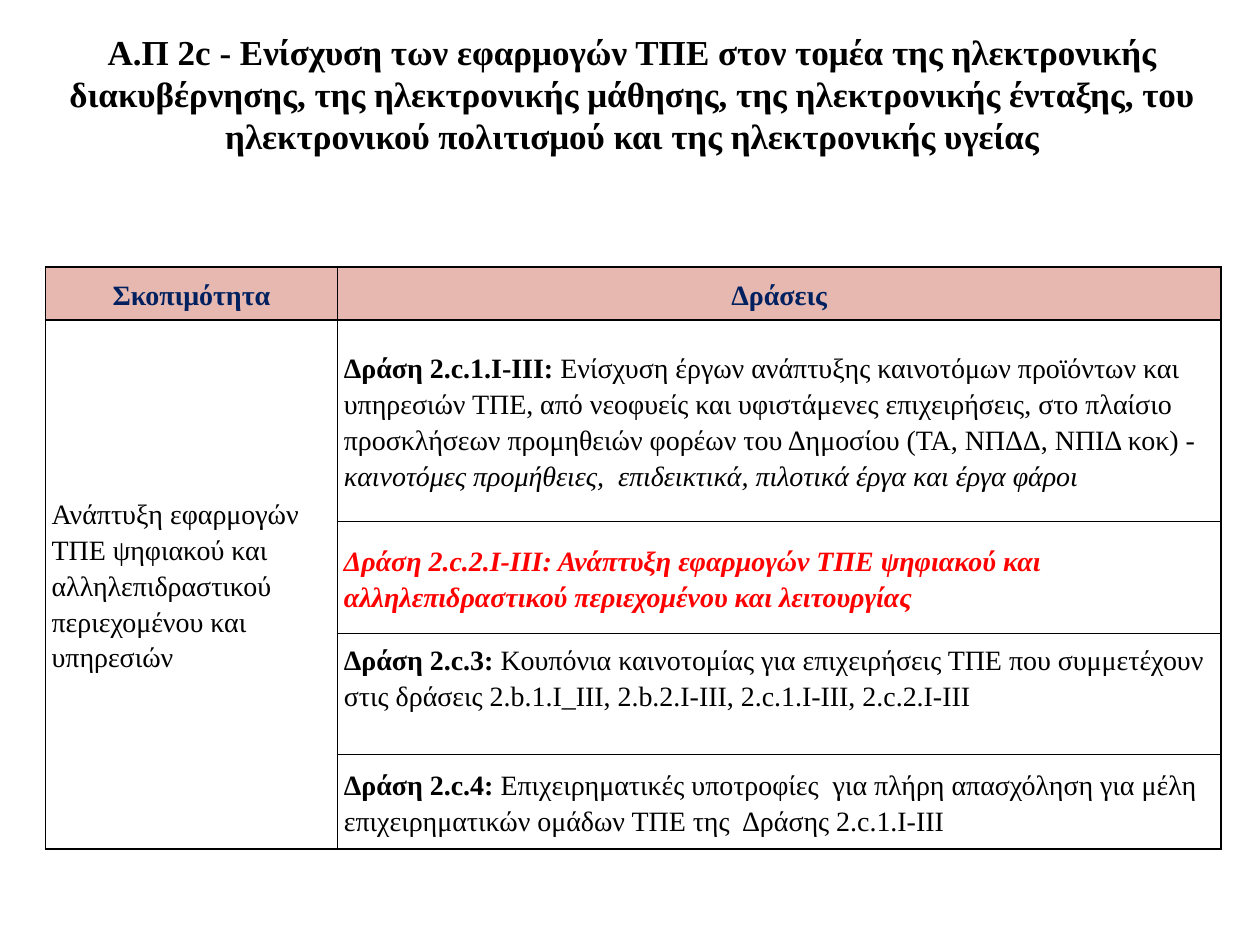
from lxml.etree import SubElement
from pptx import Presentation
from pptx.dml.color import RGBColor
from pptx.enum.text import MSO_ANCHOR, PP_ALIGN
from pptx.oxml.ns import qn
from pptx.util import Inches, Pt

FONT = "Times New Roman"
BLACK, NAVY, RED, PINK, WHITE = "000000", "002060", "FF0000", "E6B8AF", "FFFFFF"
COLUMNS = [2.32, 7.01]
ROWS = [0.42, 1.6, 0.89, 0.96, 0.75]
INSET = 0.05
TITLE = (
    "Α.Π 2c - Ενίσχυση των εφαρμογών ΤΠΕ στον τομέα της ηλεκτρονικής διακυβέρνησης, "
    "της ηλεκτρονικής μάθησης, της ηλεκτρονικής ένταξης, του ηλεκτρονικού πολιτισμού "
    "και της ηλεκτρονικής υγείας"
)
HEADERS = ["Σκοπιμότητα", "Δράσεις"]
PURPOSE = "Ανάπτυξη εφαρμογών ΤΠΕ ψηφιακού και αλληλεπιδραστικού περιεχομένου και υπηρεσιών"
ACTIONS = [
    [
        ("Δράση 2.c.1.Ι-ΙΙΙ: ", "b"),
        ("Ενίσχυση έργων ανάπτυξης καινοτόμων προϊόντων και υπηρεσιών ΤΠΕ, από νεοφυείς "
         "και υφιστάμενες επιχειρήσεις, στο πλαίσιο προσκλήσεων προμηθειών φορέων του "
         "Δημοσίου (ΤΑ, ΝΠΔΔ, ΝΠΙΔ κοκ) - ", ""),
        ("καινοτόμες προμήθειες,  επιδεικτικά, πιλοτικά έργα και έργα φάροι", "i"),
    ],
    [
        ("Δράση 2.c.2.I-ΙΙΙ: Ανάπτυξη εφαρμογών ΤΠΕ ψηφιακού και αλληλεπιδραστικού "
         "περιεχομένου και λειτουργίας", "bi"),
    ],
    [
        ("Δράση 2.c.3: ", "b"),
        ("Κουπόνια καινοτομίας για επιχειρήσεις ΤΠΕ που συμμετέχουν στις δράσεις "
         "2.b.1.Ι_ΙΙΙ, 2.b.2.Ι-ΙΙΙ, 2.c.1.I-III, 2.c.2.I-III", ""),
    ],
    [
        ("Δράση 2.c.4: ", "b"),
        ("Επιχειρηματικές υποτροφίες  για πλήρη απασχόληση για μέλη επιχειρηματικών "
         "ομάδων ΤΠΕ της  Δράσης 2.c.1.I-III", ""),
    ],
]
ACTION_COLORS = [BLACK, RED, BLACK, BLACK]


def color(value):
    """Return the colour for a hex string."""
    return RGBColor.from_string(value)


def write(paragraph, runs, size, ink, alignment=PP_ALIGN.LEFT):
    """Fill a paragraph with (text, style) runs, where b is bold and i is italic."""
    paragraph.alignment = alignment
    paragraph.font.name = FONT
    paragraph.font.size = Pt(size)
    paragraph.font.color.rgb = color(ink)
    for text, style in runs:
        run = paragraph.add_run()
        run.text = text
        run.font.name = FONT
        run.font.size = Pt(size)
        run.font.color.rgb = color(ink)
        run.font.bold = "b" in style
        run.font.italic = "i" in style


def add_title(slide, left, top, width, height):
    """Place the centred heading in the given box."""
    frame = slide.shapes.add_textbox(*map(Inches, (left, top, width, height))).text_frame
    frame.word_wrap = True
    write(frame.paragraphs[0], [(TITLE, "b")], 20, BLACK, PP_ALIGN.CENTER)


def style_cell(cell, background):
    """Give a cell its fill, insets and thin black borders."""
    cell.vertical_anchor = MSO_ANCHOR.MIDDLE
    cell.margin_left = cell.margin_right = Inches(INSET)
    cell.margin_top = cell.margin_bottom = Inches(INSET)
    properties = cell._tc.get_or_add_tcPr()
    for side in ("a:lnL", "a:lnR", "a:lnT", "a:lnB"):
        line = SubElement(properties, qn(side), w=str(Pt(1)))
        fill = SubElement(line, qn("a:solidFill"))
        SubElement(fill, qn("a:srgbClr"), val=BLACK)
    cell.fill.solid()
    cell.fill.fore_color.rgb = color(background)


def fill_cell(cell, runs, ink, alignment=PP_ALIGN.LEFT):
    """Write the text of a table cell."""
    paragraph = cell.text_frame.paragraphs[0]
    paragraph.line_spacing = 1.15
    write(paragraph, runs, 16, ink, alignment)


def add_actions_table(slide, left, top):
    """Place the table of purpose and actions from its top left corner."""
    box = map(Inches, (left, top, sum(COLUMNS), sum(ROWS)))
    table = slide.shapes.add_table(len(ROWS), len(COLUMNS), *box).table
    table.horz_banding = False
    for column, width in zip(table.columns, COLUMNS):
        column.width = Inches(width)
    for row, height in zip(table.rows, ROWS):
        row.height = Inches(height)
    for row_index in range(len(ROWS)):
        for column_index in range(len(COLUMNS)):
            style_cell(table.cell(row_index, column_index), WHITE if row_index else PINK)
    for column_index, header in enumerate(HEADERS):
        fill_cell(table.cell(0, column_index), [(header, "b")], NAVY, PP_ALIGN.CENTER)
    table.cell(1, 0).merge(table.cell(len(ROWS) - 1, 0))
    fill_cell(table.cell(1, 0), [(PURPOSE, "")], BLACK)
    for row_index, (runs, ink) in enumerate(zip(ACTIONS, ACTION_COLORS), start=1):
        fill_cell(table.cell(row_index, 1), runs, ink)
    table.cell(3, 1).margin_bottom = Inches(0.33)


def main():
    """Build the slide and save it."""
    presentation = Presentation()
    presentation.slide_width = Inches(10)
    presentation.slide_height = Inches(7.5)
    slide = presentation.slides.add_slide(presentation.slide_layouts[6])
    add_actions_table(slide, 0.36, 2.12)
    add_title(slide, 0.3, 0.19, 9.44, 1.11)
    presentation.save("out.pptx")


if __name__ == "__main__":
    main()
